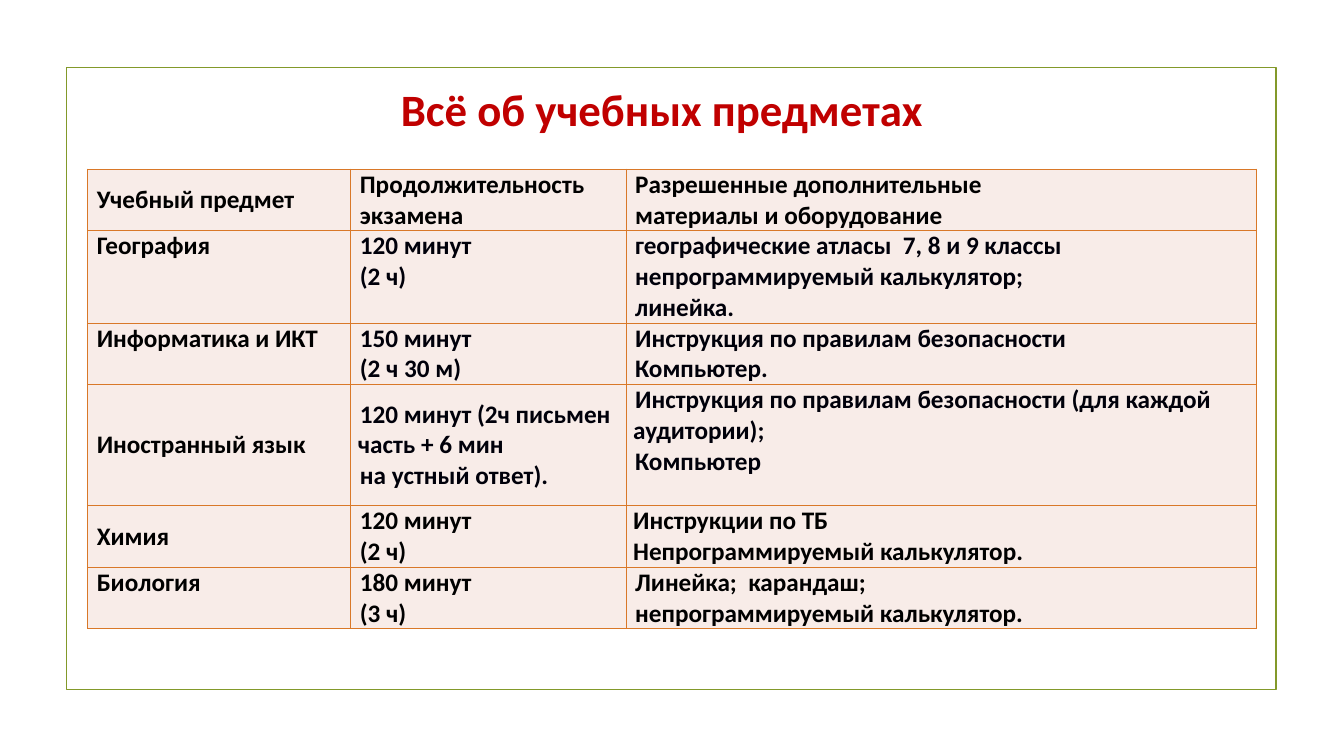
from lxml.etree import SubElement
from pptx import Presentation
from pptx.dml.color import RGBColor
from pptx.enum.shapes import MSO_SHAPE
from pptx.enum.text import MSO_ANCHOR, MSO_AUTO_SIZE, PP_ALIGN
from pptx.oxml.ns import qn
from pptx.util import Inches, Pt

HUES = {
    "frame": "83992A", "title": "C00000", "rule": "D97828",
    "cell": "F8ECE8", "black": "000000", "ink": "00000A",
}
WIDTHS = (2.61, 2.73, 6.25)
LINE = 0.3  # height of one text line in the table

# Each row: lines of height, cells centred from the left, colour of the
# answers, cell texts
ROWS = [
    (2, 3, "black", ["Учебный предмет", "Продолжительность\nэкзамена",
                     "Разрешенные дополнительные\nматериалы и оборудование"]),
    (3, 0, "ink", ["География", "120 минут\n(2 ч)",
                   "географические атласы  7, 8 и 9 классы\n"
                   "непрограммируемый калькулятор;\nлинейка."]),
    (2, 0, "ink", ["Информатика и ИКТ", "150 минут\n(2 ч 30 м)",
                   "Инструкция по правилам безопасности\nКомпьютер."]),
    (4, 2, "ink", ["Иностранный язык",
                   "120 минут (2ч письмен часть + 6 мин\nна устный ответ).",
                   "Инструкция по правилам безопасности (для каждой аудитории);\n"
                   "Компьютер"]),
    (2, 3, "black", ["Химия", "120 минут\n(2 ч)",
                     "Инструкции по ТБ\nНепрограммируемый калькулятор."]),
    (2, 0, "black", ["Биология", "180 минут\n(3 ч)",
                     "Линейка;  карандаш;\nнепрограммируемый калькулятор."]),
]
FLUSH = "Химия", 2  # the one cell without a first-line indent


class Deck:
    def __init__(self):
        self.font = "Calibri"
        self.prs = Presentation()
        self.prs.slide_width = Inches(13.33)
        self.prs.slide_height = Inches(7.5)
        self.slide = self.prs.slides.add_slide(self.prs.slide_layouts[6])

    def hue(self, name):
        return RGBColor.from_string(HUES[name])

    def frame(self, *box):
        rect = self.slide.shapes.add_shape(MSO_SHAPE.RECTANGLE, *map(Inches, box))
        rect.shadow.inherit = False
        rect.fill.background()
        rect.line.color.rgb = self.hue("frame")
        rect.line.width = Pt(1.25)

    def text(self, body, words, size, hue, align=PP_ALIGN.LEFT, indent=0):
        for i, line in enumerate(words.split("\n")):
            par = body.add_paragraph() if i else body.paragraphs[0]
            par.alignment = align
            if indent:
                props = par._p.get_or_add_pPr()
                props.set("marL", "0")
                props.set("indent", str(Inches(indent)))
            run = par.add_run()
            run.text = line
            run.font.name = self.font
            run.font.size = Pt(size)
            run.font.bold = True
            run.font.color.rgb = self.hue(hue)

    def title(self, words, *box):
        shape = self.slide.shapes.add_textbox(*map(Inches, box))
        shape.text_frame.word_wrap = True
        shape.text_frame.auto_size = MSO_AUTO_SIZE.SHAPE_TO_FIT_TEXT
        self.text(shape.text_frame, words, 32, "title", PP_ALIGN.CENTER)

    def edge(self, cell):
        props = cell._tc.get_or_add_tcPr()
        for side in "LRTB":
            line = SubElement(props, qn("a:ln" + side), w=str(Pt(1)))
            fill = SubElement(line, qn("a:solidFill"))
            SubElement(fill, qn("a:srgbClr"), val=HUES["rule"])

    def cell(self, cell, words, hue, centred, indent):
        self.edge(cell)
        cell.fill.solid()
        cell.fill.fore_color.rgb = self.hue("cell")
        cell.margin_left = cell.margin_right = Inches(0.07)
        cell.margin_top = cell.margin_bottom = 0
        cell.vertical_anchor = MSO_ANCHOR.MIDDLE if centred else MSO_ANCHOR.TOP
        self.text(cell.text_frame, words, 18, hue, indent=indent)

    def table(self, left, top):
        high = LINE * sum(row[0] for row in ROWS)
        box = map(Inches, (left, top, sum(WIDTHS), high))
        table = self.slide.shapes.add_table(len(ROWS), len(WIDTHS), *box).table
        table.first_row = table.horz_banding = False
        for col, width in zip(table.columns, WIDTHS):
            col.width = Inches(width)
        for r, (lines, mid, hue, texts) in enumerate(ROWS):
            table.rows[r].height = Inches(LINE * lines)
            for c, words in enumerate(texts):
                indent = 0 if (texts[0], c) == FLUSH else 0.02
                self.cell(table.cell(r, c), words, hue if c else "black",
                          c < mid, indent)


def main():
    deck = Deck()
    # Border of the slide
    deck.frame(0.66, 0.67, 12, 6.17)
    # Exam table
    deck.table(0.87, 1.68)
    # Heading
    deck.title("Всё об учебных предметах", 0.77, 0.76, 11.59, 0.64)
    deck.prs.save("out.pptx")


if __name__ == "__main__":
    main()
